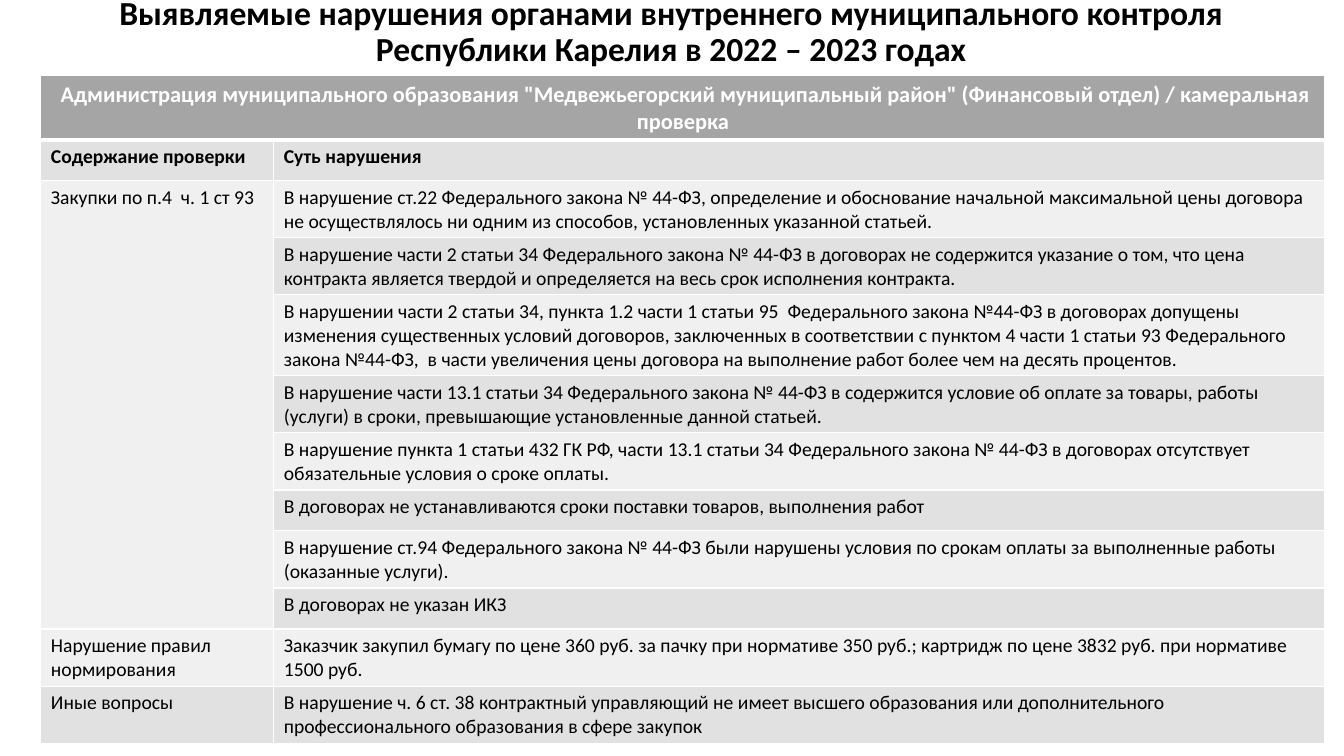
from dataclasses import dataclass

from lxml.etree import SubElement
from pptx import Presentation
from pptx.dml.color import RGBColor
from pptx.enum.text import MSO_ANCHOR, PP_ALIGN
from pptx.oxml.ns import qn
from pptx.util import Cm, Pt

COLORS = {"text": "000000", "white": "FFFFFF", "header": "A5A5A5",
          "dark": "E1E1E1", "light": "F0F0F0"}
FONT = "Calibri"
TITLE = ("Выявляемые нарушения органами внутреннего муниципального контроля "
         "Республики Карелия в 2022 – 2023 годах")
HEADER = ('Администрация муниципального образования "Медвежьегорский '
          'муниципальный район" (Финансовый отдел) / камеральная проверка')
COL_WIDTHS = (Cm(5.87), Cm(26.49))
ROW_HEIGHT = Cm(1.03)


@dataclass
class Check:
    subject: str
    violations: list[str]
    bold: bool = False


CHECKS = [
    Check("Содержание проверки", ["Суть нарушения"], bold=True),
    Check("Закупки по п.4  ч. 1 ст 93", [
        "В нарушение ст.22 Федерального закона № 44-ФЗ, определение и обоснование "
        "начальной максимальной цены договора не осуществлялось ни одним из способов, "
        "установленных указанной статьей.",
        "В нарушение части 2 статьи 34 Федерального закона № 44-ФЗ в договорах не "
        "содержится указание о том, что цена контракта является твердой и определяется "
        "на весь срок исполнения контракта.",
        "В нарушении части 2 статьи 34, пункта 1.2 части 1 статьи 95  Федерального "
        "закона №44-ФЗ в договорах допущены изменения существенных условий договоров, "
        "заключенных в соответствии с пунктом 4 части 1 статьи 93 Федерального закона "
        "№44-ФЗ,  в части увеличения цены договора на выполнение работ более чем на "
        "десять процентов.",
        "В нарушение части 13.1 статьи 34 Федерального закона № 44-ФЗ в содержится "
        "условие об оплате за товары, работы (услуги) в сроки, превышающие "
        "установленные данной статьей.",
        "В нарушение пункта 1 статьи 432 ГК РФ, части 13.1 статьи 34 Федерального "
        "закона № 44-ФЗ в договорах отсутствует обязательные условия о сроке оплаты.",
        "В договорах не устанавливаются сроки поставки товаров, выполнения работ",
        "В нарушение ст.94 Федерального закона № 44-ФЗ были нарушены условия по срокам "
        "оплаты за выполненные работы (оказанные услуги).",
        "В договорах не указан ИКЗ",
    ]),
    Check("Нарушение правил нормирования", [
        "Заказчик закупил бумагу по цене 360 руб. за пачку при нормативе 350 руб.; "
        "картридж по цене 3832 руб. при нормативе 1500 руб.",
    ]),
    Check("Иные вопросы", [
        "В нарушение ч. 6 ст. 38 контрактный управляющий не имеет высшего образования "
        "или дополнительного профессионального образования в сфере закупок",
    ]),
]


def set_text(tf, text: str, size: int, color: str, bold: bool,
             align: PP_ALIGN = PP_ALIGN.LEFT) -> None:
    tf.text = text
    p = tf.paragraphs[0]
    p.alignment = align
    font = p.runs[0].font
    font.name, font.size, font.bold = FONT, Pt(size), bold
    font.color.rgb = RGBColor.from_string(COLORS[color])


def style_cell(cell, fill: str, bottom: int = 1) -> None:
    """Fill the cell and give it white borders; bottom is a width in points."""
    tc_pr = cell._tc.get_or_add_tcPr()
    for side, width in (("L", 1), ("R", 1), ("T", 1), ("B", bottom)):
        ln = SubElement(tc_pr, qn(f"a:ln{side}"), w=str(Pt(width)))
        solid = SubElement(ln, qn("a:solidFill"))
        SubElement(solid, qn("a:srgbClr"), val=COLORS["white"])
    cell.fill.solid()
    cell.fill.fore_color.rgb = RGBColor.from_string(COLORS[fill])


def add_title(s) -> None:
    tf = s.shapes.add_textbox(Cm(2.31), Cm(0), Cm(29.21), Cm(1.63)).text_frame
    tf.word_wrap = True
    tf.vertical_anchor = MSO_ANCHOR.MIDDLE
    set_text(tf, TITLE, 24, "text", True, PP_ALIGN.CENTER)
    tf.paragraphs[0].line_spacing = 0.9


def add_violations_table(s) -> None:
    n_rows = 1 + sum(len(check.violations) for check in CHECKS)
    table = s.shapes.add_table(n_rows, len(COL_WIDTHS), Cm(1.03), Cm(1.91),
                               sum(COL_WIDTHS), ROW_HEIGHT * n_rows).table
    for column, width in zip(table.columns, COL_WIDTHS):
        column.width = width
    for i, row in enumerate(table.rows):
        for cell in row.cells:
            if i == 0:
                style_cell(cell, "header", bottom=3)
            else:
                style_cell(cell, "dark" if i % 2 else "light")

    table.cell(0, 0).merge(table.cell(0, 1))
    set_text(table.cell(0, 0).text_frame, " " + HEADER, 16, "white", True,
             PP_ALIGN.CENTER)
    top = 1
    for check in CHECKS:
        subject = table.cell(top, 0)
        if len(check.violations) > 1:
            subject.merge(table.cell(top + len(check.violations) - 1, 0))
        set_text(subject.text_frame, check.subject, 14, "text", check.bold)
        for i, violation in enumerate(check.violations, top):
            set_text(table.cell(i, 1).text_frame, violation, 14, "text", check.bold)
        top += len(check.violations)


def main() -> None:
    prs = Presentation()
    prs.slide_width, prs.slide_height = Cm(33.87), Cm(19.05)
    s = prs.slides.add_slide(prs.slide_layouts[6])
    add_title(s)
    add_violations_table(s)
    prs.save("out.pptx")


if __name__ == "__main__":
    main()
